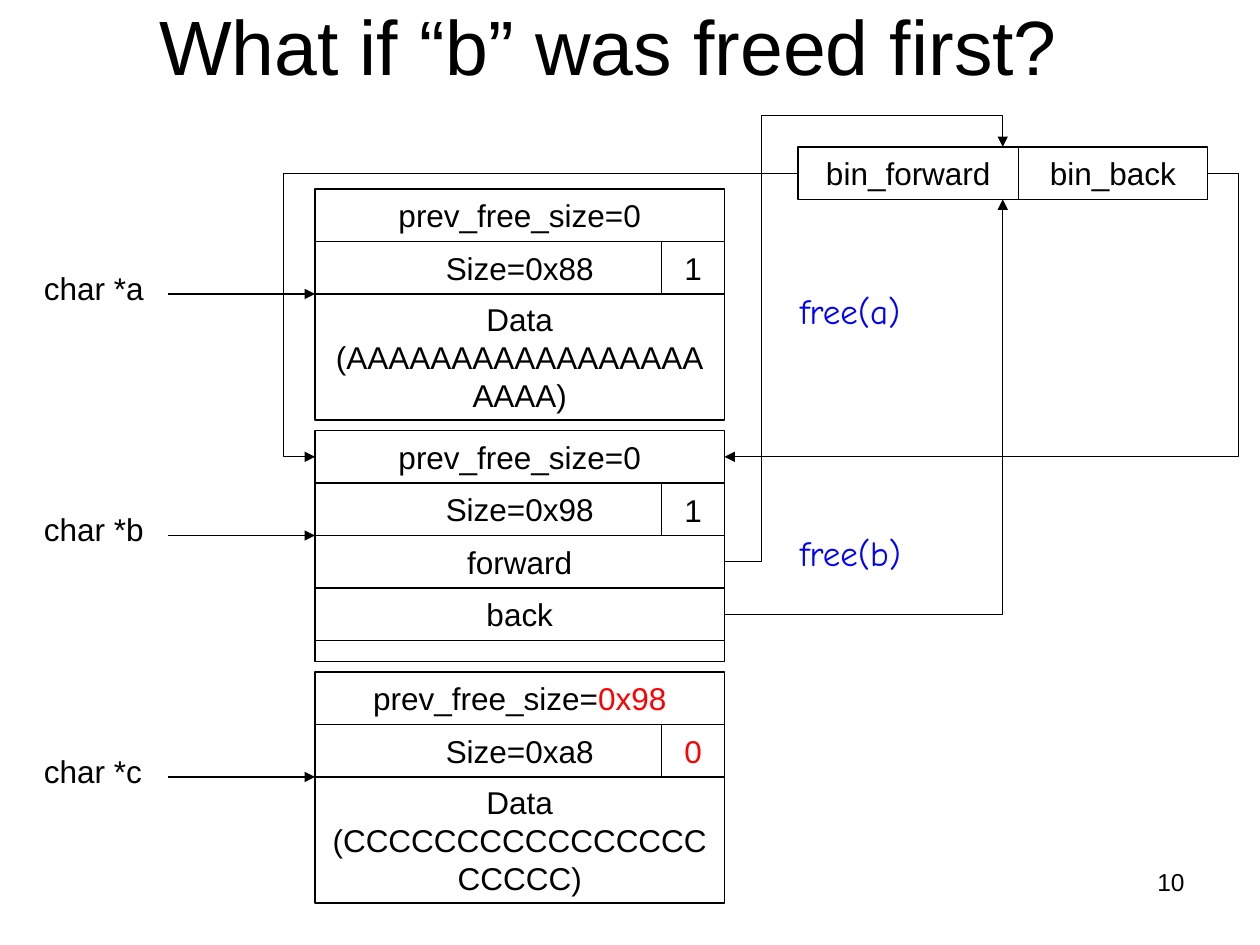
from dataclasses import dataclass

import pptx
import pptx.dml.color
import pptx.enum.shapes
import pptx.enum.text
import pptx.oxml
import pptx.oxml.ns
import pptx.util
from lxml import etree

Pt = pptx.util.Pt
qn = pptx.oxml.ns.qn
ALIGN = pptx.enum.text.PP_ALIGN
ANCHOR = pptx.enum.text.MSO_ANCHOR
CONNECTOR = pptx.enum.shapes.MSO_CONNECTOR
RECTANGLE = pptx.enum.shapes.MSO_SHAPE.RECTANGLE


@dataclass(frozen=True)
class Theme:
    ink: str = "000000"
    changed: str = "FF0000"
    call: str = "0000FF"
    font: str = "Arial"
    call_font: str = "Comic Neue"
    title: int = 44
    body: int = 18
    call_size: int = 20
    number: int = 14
    line: float = 0.75


THEME = Theme()
ROW = 30          # height of a header or pointer row
BODY = 72         # height of the user data area
FLAG = 36         # width of the in-use flag
CHUNK_PITCH = 138


def rgb(value):
    return pptx.dml.color.RGBColor.from_string(value)


def apply(target, values):
    for name, value in values.items():
        setattr(target, name, value)


def write(shape, spans, align=ALIGN.LEFT, anchor=ANCHOR.TOP, size=THEME.body, font=THEME.font):
    """Fill a shape with one paragraph made of (text, colour) spans."""
    frame = shape.text_frame
    apply(frame, {"word_wrap": True, "vertical_anchor": anchor})
    para = frame.paragraphs[0]
    para.alignment = align
    for text, colour in spans:
        span = para.add_run()
        span.text = text
        apply(span.font, {"size": Pt(size), "name": font})
        span.font.color.rgb = rgb(colour)


def add_text(page, box, text, colour=THEME.ink, **style):
    write(page.shapes.add_textbox(*map(Pt, box)), [(text, colour)], **style)


def add_cell(page, box, *spans):
    cell = page.shapes.add_shape(RECTANGLE, *map(Pt, box))
    cell.shadow.inherit = False
    cell.fill.background()
    cell.line.color.rgb = rgb(THEME.ink)
    cell.line.width = Pt(THEME.line)
    if spans:
        write(cell, spans, ALIGN.CENTER, ANCHOR.MIDDLE)


def add_line(page, begin, end, arrow=False, kind=CONNECTOR.STRAIGHT):
    line = page.shapes.add_connector(kind, *map(Pt, begin + end))
    line.line.color.rgb = rgb(THEME.ink)
    line.line.width = Pt(THEME.line)
    properties = line._element.spPr
    if arrow:
        etree.SubElement(properties.find(qn("a:ln")), qn("a:tailEnd"), type="triangle")
    etree.SubElement(properties, qn("a:effectLst"))
    return line


def add_elbow(page, begin, end, preset, *bends):
    """Draw a bent arrow; bends are fractions of the way from begin to end."""
    line = add_line(page, begin, end, True, CONNECTOR.ELBOW)
    geometry = line._element.spPr.find(qn("a:prstGeom"))
    geometry.set("prst", preset)
    guides = geometry.find(qn("a:avLst"))
    if guides is None:
        guides = etree.SubElement(geometry, qn("a:avLst"))
    for index, bend in enumerate(bends, 1):
        etree.SubElement(guides, qn("a:gd"), name=f"adj{index}",
                         fmla=f"val {round(bend * 100000)}")


def add_chunk(page, box, name, previous, size, flag, data=None):
    """Draw a heap chunk; without data its body holds the free-list pointers."""
    left, top, width, height = box
    size_top, body_top = top + ROW, top + 2 * ROW
    flag_left = left + width - FLAG
    add_cell(page, (left, top, width, ROW), ("prev_free_size=", THEME.ink), previous)
    add_cell(page, (left, size_top, width, ROW), (size, THEME.ink))
    add_line(page, (flag_left, size_top), (flag_left, body_top))
    add_text(page, (flag_left + 6, size_top + 1, FLAG, 29), *flag)

    body = (left, body_top, width, height - 2 * ROW)
    if data:
        add_cell(page, body, (data, THEME.ink))
    else:
        add_cell(page, body)
        for index, pointer in enumerate(("forward", "back")):
            add_cell(page, (left, body_top + index * ROW, width, ROW), (pointer, THEME.ink))

    add_text(page, (18, body_top - 18, 78, 29), f"char *{name}")
    add_line(page, (96, body_top), (left, body_top), arrow=True)


def add_bin(page, box):
    left, top, width, height = box
    split = 126
    add_cell(page, (left, top, split, height), ("bin_forward", THEME.ink))
    add_cell(page, (left + split, top, width - split, height), ("bin_back", THEME.ink))


def add_links(page, bin_box, chunk_box):
    """Join the bin and the freed chunk in both directions."""
    bin_left, bin_top, bin_width, bin_height = bin_box
    left, top, width, _ = chunk_box
    right, bin_right = left + width, bin_left + bin_width
    bin_middle, chunk_middle = bin_top + bin_height / 2, top + ROW / 2
    forward_middle, back_middle = top + 2.5 * ROW, top + 3.5 * ROW
    target = bin_left + bin_width / 2
    margin, gap, rise = 18, 21, 18

    reach = margin / (bin_left - left)
    add_elbow(page, (bin_left, bin_middle), (left, chunk_middle), "bentConnector3", 1 + reach)
    add_elbow(page, (bin_right, bin_middle), (right, chunk_middle), "bentConnector3", -reach)
    add_elbow(page, (right, forward_middle), (target, bin_top), "bentConnector4",
              gap / (target - right), 1 + rise / (forward_middle - bin_top))
    add_elbow(page, (right, back_middle), (target, bin_top + bin_height), "bentConnector2")


def add_heap(page, box):
    left, top, width, bin_box = *box, (456, 84, 234, ROW)
    chunks = (
        ("a", ("0", THEME.ink), "Size=0x88", ("1", THEME.ink), f"Data ({'A' * 21})"),
        ("b", ("0", THEME.ink), "Size=0x98", ("1", THEME.ink)),
        ("c", ("0x98", THEME.changed), "Size=0xa8", ("0", THEME.changed), f"Data ({'C' * 21})"),
    )
    boxes = [(left, top + index * CHUNK_PITCH, width, 2 * ROW + BODY)
             for index in range(len(chunks))]
    for chunk_box, chunk in zip(boxes, chunks):
        add_chunk(page, chunk_box, *chunk)
    add_bin(page, bin_box)
    add_links(page, bin_box, boxes[1])
    for chunk_box, name in zip(boxes, "ab"):
        add_text(page, (450, chunk_box[1] + 54, 126, 32), f"free({name})", THEME.call,
                 size=THEME.call_size, font=THEME.call_font)


def main():
    deck = pptx.Presentation()
    apply(deck, {"slide_width": Pt(720), "slide_height": Pt(540)})
    page = deck.slides.add_slide(deck.slide_layouts[6])
    add_text(page, (30, -6, 648, 63), "What if “b” was freed first? ",
             align=ALIGN.CENTER, anchor=ANCHOR.MIDDLE, size=THEME.title)
    add_heap(page, (180, 108, 234))
    add_text(page, (516, 492, 168, 37), "10", align=ALIGN.RIGHT, size=THEME.number)
    deck.save("out.pptx")


if __name__ == "__main__":
    main()
